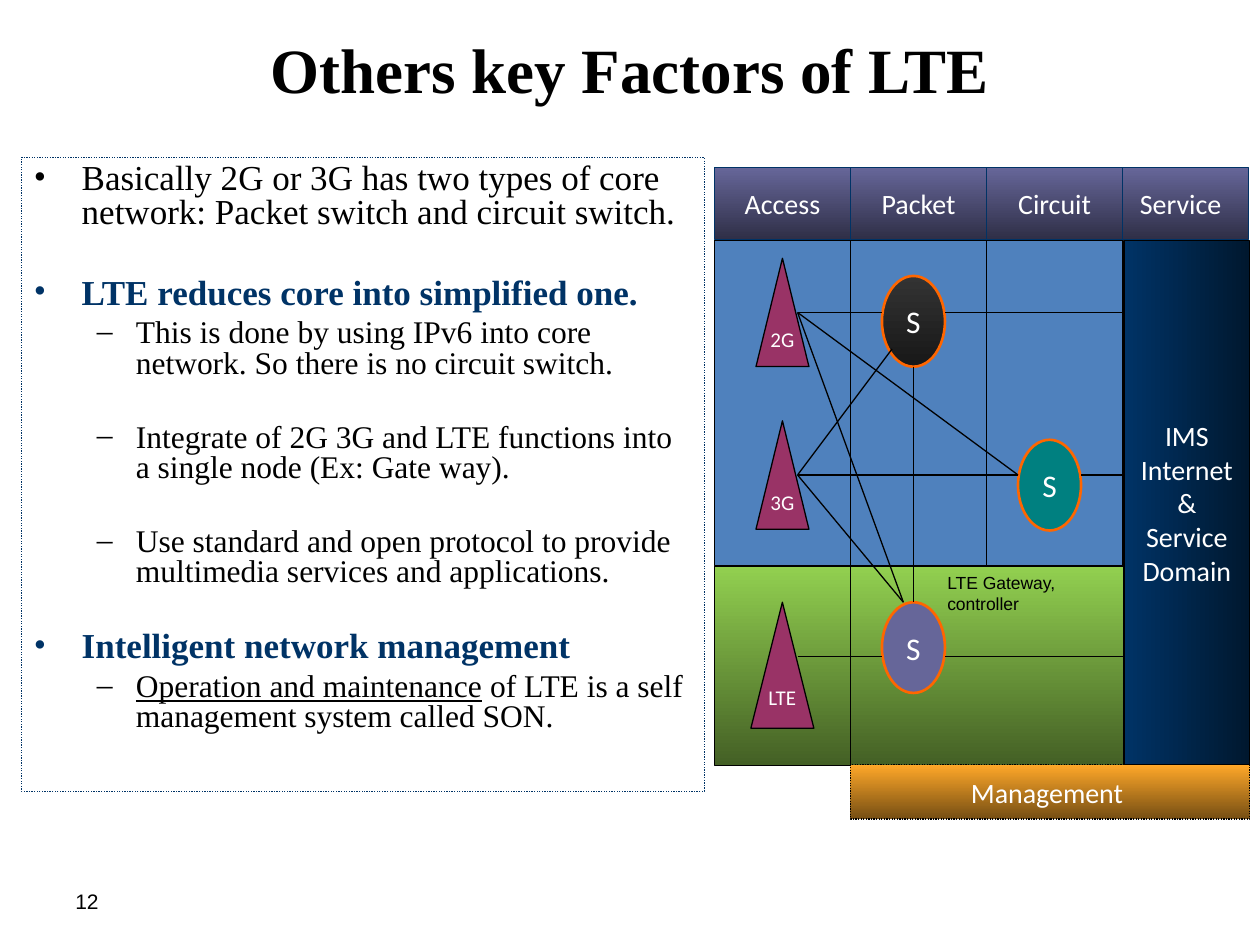
from dataclasses import dataclass

from lxml.etree import SubElement
from pptx import Presentation
from pptx.dml.color import RGBColor
from pptx.enum.dml import MSO_LINE
from pptx.enum.shapes import MSO_CONNECTOR, MSO_SHAPE as SHAPE
from pptx.enum.text import MSO_ANCHOR as ANCHOR, PP_ALIGN as ALIGN
from pptx.oxml.ns import qn
from pptx.util import Inches, Pt

BLACK, WHITE = RGBColor(0, 0, 0), RGBColor(255, 255, 255)
NAVY, DARK_NAVY = RGBColor(0x00, 0x33, 0x66), RGBColor(0x00, 0x18, 0x2F)
PURPLE, DARK_PURPLE = RGBColor(0x66, 0x66, 0x99), RGBColor(0x2F, 0x2F, 0x47)
GREEN, DARK_GREEN = RGBColor(0x92, 0xD0, 0x50), RGBColor(0x44, 0x60, 0x25)
AMBER, DARK_AMBER = RGBColor(0xFF, 0xA8, 0x29), RGBColor(0x76, 0x4E, 0x13)
GRAY, DARK_GRAY = RGBColor(0x33, 0x33, 0x33), RGBColor(0x18, 0x18, 0x18)
BLUE, PLUM = RGBColor(0x4F, 0x81, 0xBD), RGBColor(0x99, 0x33, 0x66)
TEAL, ORANGE = RGBColor(0x00, 0x80, 0x80), RGBColor(0xFF, 0x66, 0x00)
SERIF, SANS, LABEL = "Times New Roman", "Arial", "Calibri"


@dataclass
class Block:
    """A filled shape; two fill colours make a gradient."""
    box: tuple[float, float, float, float]
    fill: tuple[RGBColor, ...]
    text: str = ""
    size: float = 16
    kind: SHAPE = SHAPE.RECTANGLE
    line: RGBColor = BLACK
    width: float = 0.75
    dotted: bool = False
    angle: float = 270


@dataclass
class Bullet:
    text: str
    space_before: float
    main: bool = False
    bold: bool = False
    underlined: str = ""


def add_run(paragraph, text: str, size: float, font: str, color: RGBColor,
            bold: bool = False, underline: bool = False) -> None:
    run = paragraph.add_run()
    run.text = text
    run.font.size, run.font.name = Pt(size), font
    run.font.color.rgb = color
    run.font.bold, run.font.underline = bold, underline


def add_block(slide, block: Block):
    shape = slide.shapes.add_shape(block.kind, *map(Inches, block.box))
    shape.shadow.inherit = False
    if not block.fill:
        shape.fill.background()
    elif len(block.fill) == 1:
        shape.fill.solid()
        shape.fill.fore_color.rgb = block.fill[0]
    else:
        shape.fill.gradient()
        shape.fill.gradient_angle = block.angle
        for stop, position, color in zip(shape.fill.gradient_stops, (0, 1), block.fill):
            stop.position, stop.color.rgb = position, color
    shape.line.color.rgb, shape.line.width = block.line, Pt(block.width)
    if block.dotted:
        shape.line.dash_style = MSO_LINE.ROUND_DOT
    if block.text:
        frame = shape.text_frame
        frame.word_wrap, frame.vertical_anchor = False, ANCHOR.MIDDLE
        for index, words in enumerate(block.text.split("\n")):
            paragraph = frame.add_paragraph() if index else frame.paragraphs[0]
            paragraph.alignment = ALIGN.CENTER
            add_run(paragraph, words, block.size, LABEL, WHITE)
    return shape


def add_bullet(paragraph, bullet: Bullet) -> None:
    paragraph.alignment, paragraph.line_spacing = ALIGN.LEFT, 0.8
    paragraph.space_before = Pt(bullet.space_before)
    paragraph.level = 0 if bullet.main else 1
    margin, hanging, mark = (0.38, 0.38, "•") if bullet.main else (0.81, 0.31, "–")
    properties = paragraph._p.get_or_add_pPr()
    properties.set("marL", str(Inches(margin)))
    properties.set("indent", str(-Inches(hanging)))
    SubElement(properties, qn("a:buFont")).set("typeface", SERIF)
    SubElement(properties, qn("a:buChar")).set("char", mark)
    size, color = 20 if bullet.main else 18, NAVY if bullet.bold else BLACK
    if bullet.underlined:
        add_run(paragraph, bullet.underlined, size, SERIF, color, underline=True)
    add_run(paragraph, bullet.text, size, SERIF, color, bullet.bold)


def add_line(slide, start: tuple[float, float], end: tuple[float, float]) -> None:
    line = slide.shapes.add_connector(MSO_CONNECTOR.STRAIGHT, *map(Inches, start + end))
    line.line.color.rgb, line.line.width = BLACK, Pt(0.75)
    SubElement(line._element.spPr, qn("a:effectLst"))


def add_note(slide, box: tuple[float, float, float, float], text: str, size: float,
             anchor: ANCHOR, space_before: float = 0) -> None:
    frame = slide.shapes.add_textbox(*map(Inches, box)).text_frame
    frame.word_wrap, frame.vertical_anchor = True, anchor
    frame.paragraphs[0].space_before = Pt(space_before)
    add_run(frame.paragraphs[0], text, size, SANS, BLACK)


BULLETS = [
    Bullet("Basically 2G or 3G has two types of core network: "
           "Packet switch and circuit switch.", 4, main=True),
    Bullet("LTE reduces core into simplified one.", 27, main=True, bold=True),
    Bullet("This is done by using IPv6 into core network. "
           "So there is no circuit switch.", 4.5),
    Bullet("Integrate of 2G 3G and LTE functions into a single node (Ex: Gate way).", 25),
    Bullet("Use standard and open protocol to provide "
           "multimedia services and applications.", 25),
    Bullet("Intelligent network management", 24.5, main=True, bold=True),
    Bullet(" of LTE is a self management system called SON.", 4.5,
           underlined="Operation and maintenance"),
]

# Diagram grid: three network columns, then the service column
LEFT, COLUMN, SERVICE = 5.67, 1.08, 8.92
HEADER_TOP, CORE_TOP, LTE_TOP, BOTTOM = 1.33, 1.91, 4.49, 6.07
COLUMNS = [LEFT + COLUMN * index for index in range(3)]
HEADERS = list(zip(("Access", "Packet", "Service", "Circuit"),
                   (COLUMNS[0], COLUMNS[1], 8.83, COLUMNS[2])))

BLOCKS = [
    *[Block((x, HEADER_TOP, COLUMN, 0.57), (PURPLE, DARK_PURPLE), name, line=NAVY)
      for name, x in HEADERS],
    *[Block((x, CORE_TOP, COLUMN, LTE_TOP - CORE_TOP), (BLUE,), width=0.25, dotted=True)
      for x in COLUMNS],
    *[Block((x, LTE_TOP, width, BOTTOM - LTE_TOP), (GREEN, DARK_GREEN),
            width=0.25, dotted=True)
      for x, width in ((COLUMNS[0], COLUMN), (COLUMNS[1], 2.17))],
    Block((SERVICE, CORE_TOP, 1, BOTTOM - CORE_TOP), (NAVY, DARK_NAVY),
          "IMS\nInternet\n&\nService\nDomain", angle=0),
    # Access antennas
    *[Block(box, (PLUM,), name, 12, SHAPE.FLOWCHART_EXTRACT)
      for name, box in (("3G", (6, 3.34, 0.42, 0.86)), ("LTE", (5.96, 4.78, 0.5, 1)),
                        ("2G", (6, 2.05, 0.42, 0.86)))],
    # Switches
    *[Block((x, y, 0.5, 0.72), fill, "S", 18, SHAPE.OVAL, ORANGE, 1.5)
      for x, y, fill in ((7, 4.78, (PURPLE,)), (7, 2.19, (GRAY, DARK_GRAY)),
                         (8.08, 3.49, (TEAL,)))],
]

ANTENNA_2G, ANTENNA_3G, ANTENNA_LTE = (6.33, 2.48), (6.33, 3.77), (6.33, 5.21)
GATEWAY_TOP, CIRCUIT_SIDE = (7.17, 4.78), (8.08, 3.77)
LINKS = [
    (ANTENNA_2G, (7, 2.48)), ((7.5, 2.48), (SERVICE, 2.48)),
    (ANTENNA_3G, (7.08, 2.77)), (ANTENNA_2G, CIRCUIT_SIDE),
    (ANTENNA_2G, GATEWAY_TOP), (ANTENNA_3G, CIRCUIT_SIDE),
    (ANTENNA_3G, GATEWAY_TOP), ((7.25, 2.91), (7.25, 4.78)),
    (ANTENNA_LTE, (7, 5.21)), ((8.58, 3.77), (SERVICE, 3.77)),
    ((7.5, 5.21), (SERVICE, 5.21)),
]


def main() -> None:
    presentation = Presentation()
    presentation.slide_width, presentation.slide_height = Inches(10), Inches(7.5)
    slide = presentation.slides.add_slide(presentation.slide_layouts[5])

    # Title and slide number
    title = slide.shapes.title
    title.left, title.top, title.width, title.height = map(Inches, (0.5, 0, 9, 1.08))
    title.text_frame.vertical_anchor = ANCHOR.MIDDLE
    title.text_frame.paragraphs[0].alignment = ALIGN.CENTER
    add_run(title.text_frame.paragraphs[0], "Others key Factors of LTE",
            36, SERIF, BLACK, bold=True)
    add_note(slide, (0.5, 6.95, 2.33, 0.4), "12", 12, ANCHOR.MIDDLE)

    # Bulleted panel
    panel = add_block(slide, Block((0.17, 1.25, 5.42, 5.03), (), line=NAVY, dotted=True))
    frame = panel.text_frame
    frame.word_wrap, frame.vertical_anchor = True, ANCHOR.TOP
    for index, bullet in enumerate(BULLETS):
        add_bullet(frame.add_paragraph() if index else frame.paragraphs[0], bullet)

    # Network diagram
    for block in BLOCKS:
        add_block(slide, block)
    for start, end in LINKS:
        add_line(slide, start, end)
    add_block(slide, Block((COLUMNS[1], BOTTOM, 3.17, 0.43), (AMBER, DARK_AMBER),
                           "Management ", dotted=True))
    add_note(slide, (7.42, LTE_TOP, 1.5, 0.75), "LTE Gateway, controller", 10,
             ANCHOR.TOP, space_before=5)

    presentation.save("out.pptx")


if __name__ == "__main__":
    main()
